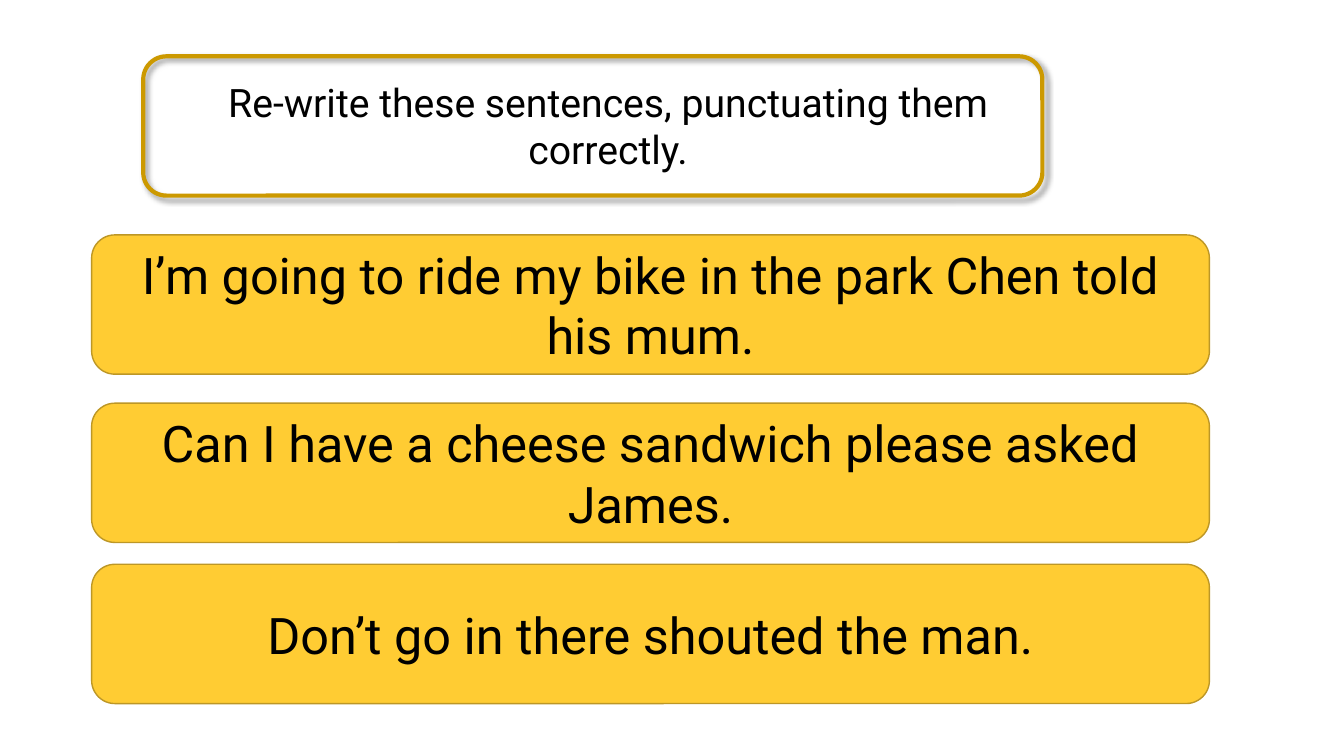
from lxml.etree import SubElement
from pptx import Presentation
from pptx.dml.color import RGBColor as RGB
from pptx.enum.shapes import MSO_SHAPE as Shape
from pptx.enum.text import MSO_ANCHOR as Anchor, MSO_AUTO_SIZE as Fit, PP_ALIGN as Align
from pptx.oxml.ns import qn
from pptx.util import Cm, Pt

BLACK = RGB(0x00, 0x00, 0x00)
GOLD = RGB(0xCC, 0x99, 0x00)
AMBER = RGB(0xFF, 0xCC, 0x33)
OCHRE = RGB(0xBD, 0x97, 0x26)

TASK = "Re-write these sentences, punctuating them correctly."
CARDS = [
    (5.92, "I’m going to ride my bike in the park Chen told his mum."),
    (10.16, "Can I have a cheese sandwich please asked James."),
    (14.22, "Don’t go in there shouted the man."),
]


def write(shape, text, size, anchor):
    frame = shape.text_frame
    frame.word_wrap = True
    frame.vertical_anchor = anchor
    para = frame.paragraphs[0]
    para.text = text
    para.alignment = Align.CENTER
    font = para.font
    font.name = "Roboto"
    font.size = Pt(size)
    font.color.rgb = BLACK


def add_panel(slide, x, y, w, h, line, weight):
    """Add an unfilled rounded panel without a shadow."""
    panel = slide.shapes.add_shape(
        Shape.ROUNDED_RECTANGLE, Cm(x), Cm(y), Cm(w), Cm(h))
    panel.fill.background()
    panel.line.color.rgb = line
    panel.line.width = Pt(weight)
    panel.shadow.inherit = False
    return panel


def cast_shadow(shape):
    """Give the shape a soft shadow to the lower right."""
    effects = shape.element.spPr.find(qn("a:effectLst"))
    outer = SubElement(effects, qn("a:outerShdw"), blurRad=str(Pt(4)),
                       dist=str(Pt(3)), dir="2700000", algn="tl",
                       rotWithShape="0")
    color = SubElement(outer, qn("a:srgbClr"), val=str(BLACK))
    SubElement(color, qn("a:alpha"), val="40000")


def add_task(slide, x, y, w, h):
    """Place the framed instruction, with the title inside the frame."""
    cast_shadow(add_panel(slide, x, y, w, h, GOLD, 3))
    title = slide.shapes.title
    title.left, title.top = Cm(x + 0.68), Cm(y + 0.43)
    title.width, title.height = Cm(w - 0.59), Cm(h - 0.87)
    write(title, TASK, 28, Anchor.TOP)
    title.text_frame.auto_size = Fit.SHAPE_TO_FIT_TEXT


def add_card(slide, text, x, y, w, h):
    card = add_panel(slide, x, y, w, h, OCHRE, 1)
    card.fill.solid()
    card.fill.fore_color.rgb = AMBER
    write(card, text, 36, Anchor.MIDDLE)


def main():
    deck = Presentation()
    deck.slide_width, deck.slide_height = Cm(33.87), Cm(19.05)
    slide = deck.slides.add_slide(deck.slide_layouts.get_by_name("Title Only"))
    add_task(slide, 3.61, 1.42, 22.66, 3.51)
    for top, text in CARDS:
        add_card(slide, text, 2.31, top, 28.17, 3.51)
    deck.save("out.pptx")


if __name__ == "__main__":
    main()
